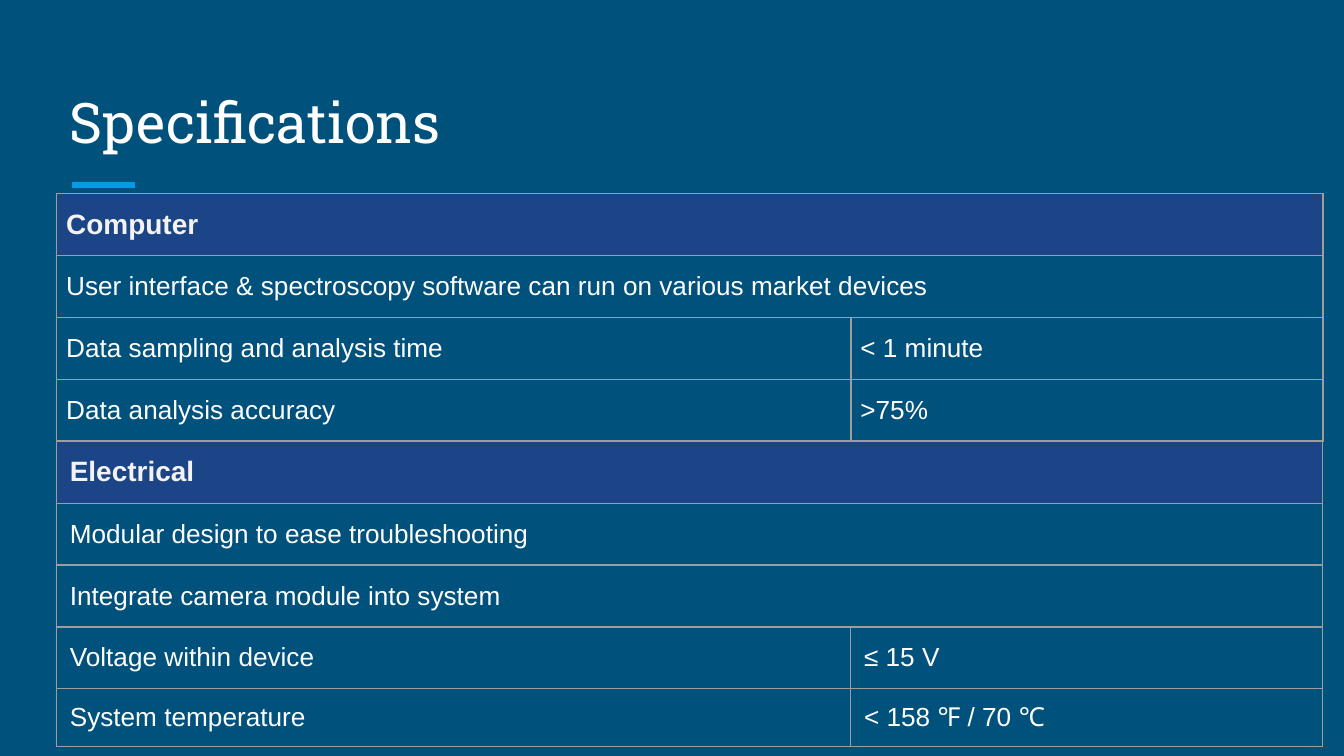
from lxml.etree import SubElement as Sub
from pptx import Presentation
from pptx.dml.color import RGBColor as RGB
from pptx.enum.shapes import MSO_CONNECTOR as LINE
from pptx.enum.text import MSO_ANCHOR as ANCHOR
from pptx.oxml import parse_xml
from pptx.oxml.ns import nsdecls, qn
from pptx.util import Cm, Pt

BACK = RGB(0x00, 0x51, 0x7C)
HEAD = RGB(0x1C, 0x45, 0x87)
BLUE = RGB(0x03, 0x9B, 0xE5)
WHITE = RGB(0xFF, 0xFF, 0xFF)
PALE = RGB(0xF3, 0xF3, 0xF3)
GREY = RGB(0x9E, 0x9E, 0x9E)


def write(frame, text, color, form):
    run = frame.paragraphs[0].add_run()
    run.text = text
    run.font.color.rgb = color
    for key, val in form.items():
        setattr(run.font, key, val)


def edge(cell, sides):
    props = cell._tc.get_or_add_tcPr()
    for i, (side, width) in enumerate(sides.items()):
        props.insert(i, parse_xml(
            f'<a:ln{side} {nsdecls("a")} w="{Pt(width)}"><a:solidFill>'
            f'<a:srgbClr val="{GREY}"/></a:solidFill></a:ln{side}>'))


# Slide and background
deck = Presentation()
deck.slide_width, deck.slide_height = Cm(25.4), Cm(14.29)
slide = deck.slides.add_slide(deck.slide_layouts[6])
slide.background.fill.solid()
slide.background.fill.fore_color.rgb = BACK

# Accent line
bar = slide.shapes.add_connector(LINE.STRAIGHT, Cm(1.36), Cm(3.5), Cm(2.55), Cm(3.5))
bar.line.color.rgb = BLUE
bar.line.width = Pt(3)
Sub(bar._element.spPr, qn("a:effectLst"))

# Title
frame = slide.shapes.add_textbox(Cm(1.07), Cm(1.27), Cm(23.24), Cm(1.9)).text_frame
form = {"word_wrap": True, "vertical_anchor": ANCHOR.BOTTOM}
form.update({f"margin_{side}": Cm(0.25) for side in ("left", "top", "right", "bottom")})
for key, val in form.items():
    setattr(frame, key, val)
write(frame, "Specifications", WHITE, {"name": "Roboto Slab", "size": Pt(30)})

# Table content: one group per heading, a lone text spans both columns
groups = [
    {"pad": 0.18, "fill": BACK, "line": 1, "rows": [
        ["Computer"],
        ["User interface & spectroscopy software can run on various market devices"],
        ["Data sampling and analysis time", "< 1 minute"],
        ["Data analysis accuracy", ">75%"]]},
    {"pad": 0.25, "fill": None, "line": 0.75, "rows": [
        ["Electrical"],
        ["Modular design to ease troubleshooting"],
        ["Integrate camera module into system"],
        ["Voltage within device", "≤ 15 V"],
        ["System temperature", "< 158 ℉ / 70 ℃"]]},
]
count = sum(len(group["rows"]) for group in groups)

# Table grid
high, last = 1.17, 0.94
wide = (15.01, 8.92)
grid = slide.shapes.add_table(count, 2, Cm(1.07), Cm(3.66), Cm(sum(wide)),
                              Cm(high * (count - 1) + last)).table
grid.first_row = grid.horz_banding = False
for col, width in zip(grid.columns, wide):
    col.width = Cm(width)
for row in grid.rows:
    row.height = Cm(high)
grid.rows[count - 1].height = Cm(last)

# Table cells
r = 0
for group in groups:
    form = {"vertical_anchor": ANCHOR.MIDDLE}
    form.update({f"margin_{side}": Cm(group["pad"])
                 for side in ("left", "top", "right", "bottom")})
    for n, texts in enumerate(group["rows"]):
        top = n == 0
        fill = HEAD if top else group["fill"]
        sides = dict.fromkeys("LRTB", group["line"])
        if top:
            sides["T"] = 1
        if len(texts) == 1:
            grid.cell(r, 0).merge(grid.cell(r, 1))
        for c in range(2):
            cell = grid.cell(r, c)
            for key, val in form.items():
                setattr(cell, key, val)
            if fill is None:
                cell.fill.background()
            else:
                cell.fill.solid()
                cell.fill.fore_color.rgb = fill
            edge(cell, sides)
        for c, text in enumerate(texts):
            write(grid.cell(r, c).text_frame, text, PALE if top else WHITE,
                  {"name": "Arial", "size": Pt(15 if top else 14), "bold": top})
        r += 1

deck.save("out.pptx")
